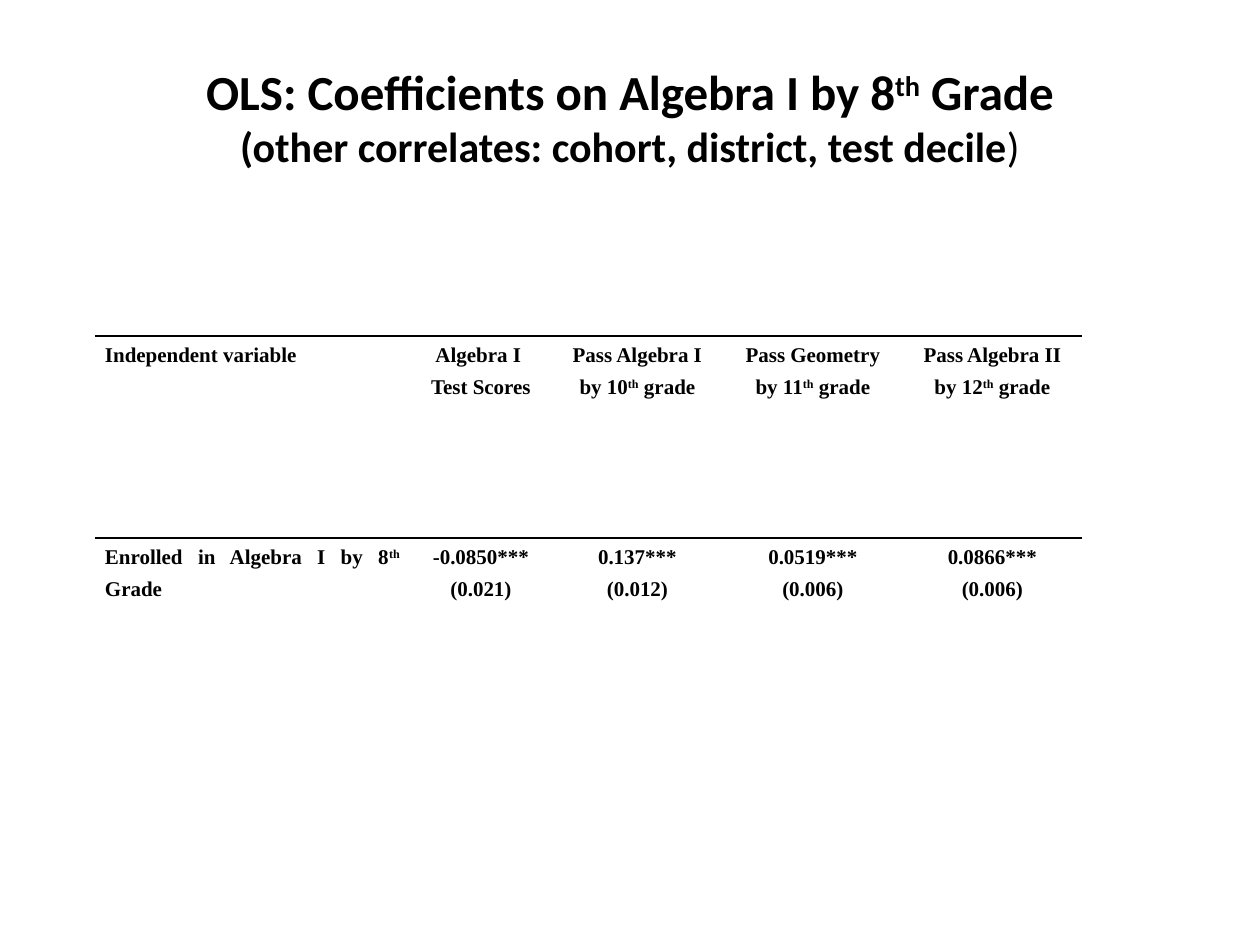
from lxml import etree
from pptx import Presentation
from pptx import util as u
from pptx.dml.color import RGBColor
from pptx.enum import text
from pptx.oxml import ns

PX = 914400 // 126
NO_STYLE = "{2D5ABB26-0587-4C30-8999-92F81FD0307C}"
ALIGN = text.PP_ALIGN


def px(length):
    """Turn whole pixels into EMU."""
    return u.Emu(length * PX)


def color(value):
    """Turn a hex string into a colour."""
    return RGBColor.from_string(value)


def write(paragraph, content, size=12, font="Times New Roman", bold=True, ink="000000"):
    """Append text; parts between carets are superscript, newlines are line breaks."""
    for part_no, part in enumerate(content.split("^")):
        for line_no, line in enumerate(part.split("\n")):
            if line_no:
                paragraph.add_line_break()
            if not line:
                continue
            run = paragraph.add_run()
            run.text = line
            run.font.size, run.font.name, run.font.bold = u.Pt(size), font, bold
            run.font.color.rgb = color(ink)
            if part_no % 2:
                run.font._element.set("baseline", "30000")


class Deck:
    """Holds the style and the current slide."""

    def __init__(self, width, height, rule="000000"):
        """Open a deck with one blank slide."""
        self.file = Presentation()
        self.file.slide_width, self.file.slide_height = px(width), px(height)
        self.slide = self.file.slides.add_slide(self.file.slide_layouts[6])
        self.rule = rule

    def title(self, box, pieces):
        """Add the centred heading from (text, format) pieces."""
        frame = self.slide.shapes.add_textbox(*map(px, box)).text_frame
        frame.word_wrap = True
        frame.vertical_anchor = text.MSO_ANCHOR.MIDDLE
        heading = frame.paragraphs[0]
        heading.alignment = ALIGN.CENTER
        for content, style in pieces:
            write(heading, content, font="Calibri", **style)

    def border(self, cell, sides):
        """Draw one-point rules on the given sides of a cell."""
        properties = cell._tc.get_or_add_tcPr()
        for place, side in enumerate(sides):
            line = etree.Element(ns.qn(f"a:ln{side}"), w=str(u.Pt(1)))
            fill = etree.SubElement(line, ns.qn("a:solidFill"))
            etree.SubElement(fill, ns.qn("a:srgbClr"), val=self.rule)
            properties.insert(place, line)

    def cell(self, cell, paragraphs, align, anchor, sides):
        """Fill and rule one table cell."""
        cell.margin_left = cell.margin_right = px(10)
        cell.margin_top = cell.margin_bottom = 0
        cell.vertical_anchor = anchor
        cell.fill.background()
        self.border(cell, sides)
        for number, content in enumerate(paragraphs):
            frame = cell.text_frame
            paragraph = frame.add_paragraph() if number else frame.paragraphs[0]
            paragraph.alignment = align
            paragraph.line_spacing = u.Pt(18)
            write(paragraph, content)

    def table(self, left, top, widths, heights, rows):
        """Add the regression table."""
        box = map(px, (left, top, sum(widths), sum(heights)))
        table = self.slide.shapes.add_table(len(rows), len(widths), *box).table
        table.first_row = table.horz_banding = False
        table._tbl.tblPr[0].text = NO_STYLE
        for column, width in zip(table.columns, widths):
            column.width = px(width)
        anchors = text.MSO_ANCHOR
        for row_no, row in enumerate(rows):
            table.rows[row_no].height = px(heights[row_no])
            for column_no, paragraphs in enumerate(row):
                align = ALIGN.CENTER if column_no else ALIGN.JUSTIFY
                body_anchor = anchors.BOTTOM if column_no else anchors.MIDDLE
                self.cell(table.cell(row_no, column_no), paragraphs, align,
                          body_anchor if row_no else anchors.TOP,
                          "T" if row_no else "TB")


def main():
    """Build the slide."""
    deck = Deck(1260, 945)
    deck.title((63, 38, 1134, 157), [
        ("OLS: Coefficients on Algebra I by 8^th^ Grade\n", {"size": 28}),
        ("(other correlates: cohort, district, test decile", {"size": 24}),
        (")", {"size": 24, "bold": False}),
    ])
    outcomes = [
        ("Algebra I \nTest Scores", "-0.0850***", "(0.021)"),
        ("Pass Algebra I by 10^th^ grade", "0.137***", "(0.012)"),
        ("Pass Geometry\nby 11^th^ grade", "0.0519***", "(0.006)"),
        ("Pass Algebra II by 12^th^ grade", "0.0866***", "(0.006)"),
    ]
    header = [["Independent variable"]] + [[name] for name, *_ in outcomes]
    estimates = [["Enrolled in Algebra I by 8^th^ Grade"]] + [values for _, *values in outcomes]
    deck.table(95, 336, (315, 142, 171, 180, 179), (202, 63), [header, estimates])
    deck.file.save("out.pptx")


if __name__ == "__main__":
    main()
